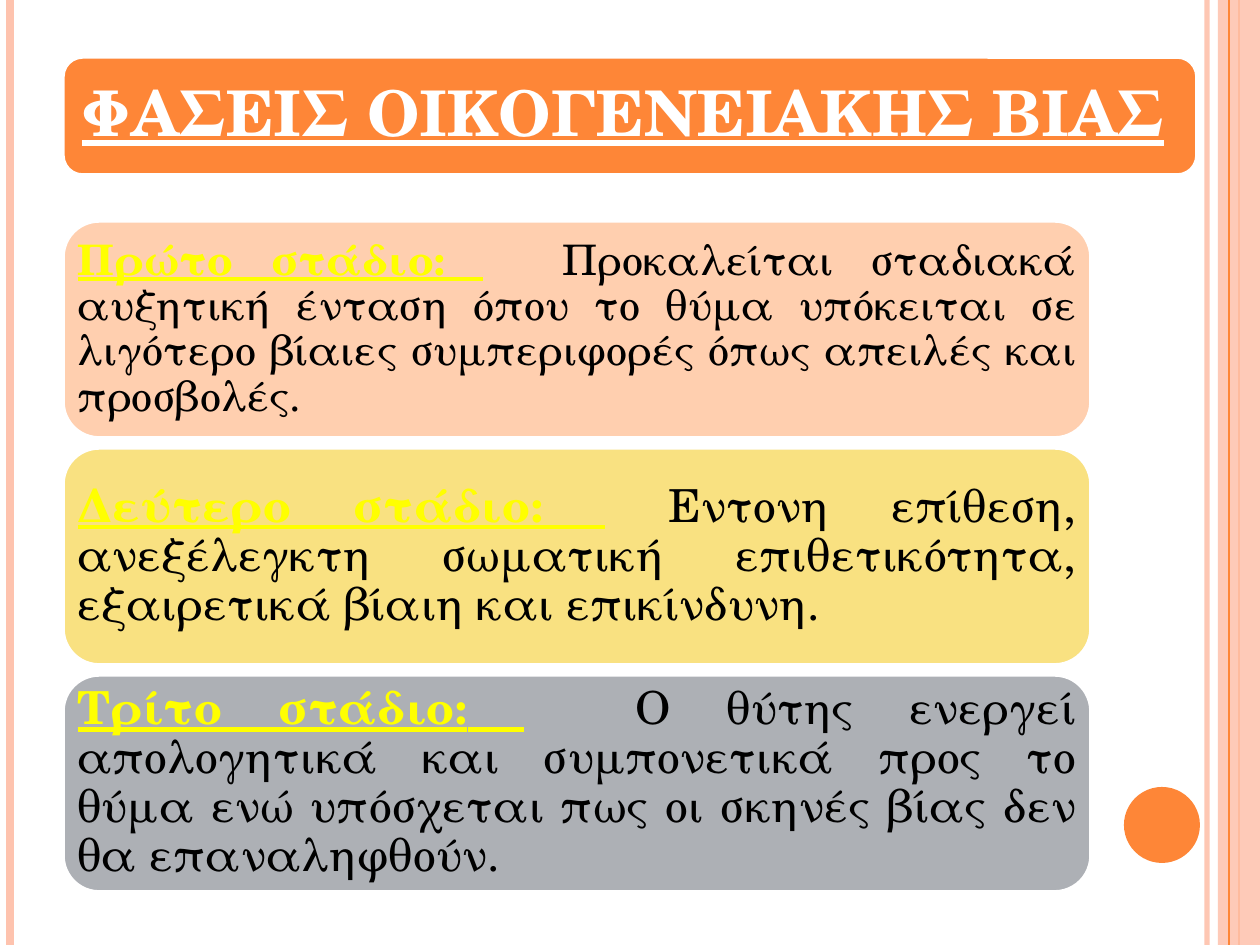
"""Builds a slide that describes the phases of domestic violence."""
from dataclasses import dataclass

from lxml import etree
from pptx import Presentation, util as u
from pptx.dml.color import RGBColor
from pptx.enum import shapes, text
from pptx.oxml.ns import qn

EMU_PER_PX = 914400 / 126
WIDTH, HEIGHT = 1260, 945


@dataclass(frozen=True)
class Theme:
    font: str = "TeX Gyre Schola"
    orange: str = "FE8637"
    pink: str = "FEC3AE"
    white: str = "FFFFFF"
    black: str = "000000"
    yellow: str = "FFFF00"
    peach: str = "FFCFAF"
    sand: str = "F9E181"
    grey: str = "ADB0B5"
    title_size: int = 36
    small_size: int = 24
    body_size: int = 26
    outline: int = 2


THEME = Theme()

STRIPES = [
    (1207, THEME.pink, 3, 93),
    (10, THEME.pink, 4.5, 100),
    (1239, THEME.orange, 1.5, 100),
]
INNER_STRIPE = (1229, THEME.orange, 0.75, 100)

STAGES = [
    ("Πρώτο στάδιο:", 45, THEME.small_size, THEME.peach,
     "Προκαλείται σταδιακά αυξητική ένταση όπου το θύμα υπόκειται σε "
     "λιγότερο βίαιες συμπεριφορές όπως απειλές και προσβολές."),
    ("Δεύτερο στάδιο:", 36, THEME.body_size, THEME.sand,
     "Εντονη επίθεση, ανεξέλεγκτη σωματική επιθετικότητα, "
     "εξαιρετικά βίαιη και επικίνδυνη."),
    ("Τρίτο στάδιο:", 64, THEME.body_size, THEME.grey,
     "Ο θύτης ενεργεί απολογητικά και συμπονετικά προς το θύμα ενώ "
     "υπόσχεται πως οι σκηνές βίας δεν θα επαναληφθούν."),
]
STAGE_LEFT, STAGE_TOP, STAGE_PITCH = 63, 221, 227
STAGE_WIDTH, STAGE_HEIGHT = 1028, 217
TITLE_BOX = (63, 57, 1134, 118)


def px(length):
    return u.Emu(round(length * EMU_PER_PX))


def paint(fill, color, opacity=100):
    fill.solid()
    fill.fore_color.rgb = RGBColor.from_string(color)
    if opacity < 100:
        color_node = next(fill._xPr.iter(qn("a:srgbClr")))
        etree.SubElement(color_node, qn("a:alpha")).set("val", str(opacity * 1000))


def add_stripe(slide, x, color, width, opacity):
    stripe = slide.shapes.add_connector(
        shapes.MSO_CONNECTOR.STRAIGHT, px(x), px(0), px(x), px(HEIGHT))
    stripe.line.width = u.Pt(width)
    paint(stripe.line.fill, color, opacity)
    etree.SubElement(stripe._element.spPr, qn("a:effectLst"))


def add_block(slide, kind, box, color, opacity=100, outline=None):
    shape = slide.shapes.add_shape(kind, *map(px, box))
    shape.shadow.inherit = False
    paint(shape.fill, color, opacity)
    if outline:
        shape.line.width = u.Pt(THEME.outline)
        paint(shape.line.fill, outline)
    else:
        shape.line.fill.background()
    return shape


def set_frame(shape, align, inset_x, inset_y):
    frame = shape.text_frame
    frame.word_wrap = True
    frame.auto_size = text.MSO_AUTO_SIZE.NONE
    frame.vertical_anchor = text.MSO_ANCHOR.MIDDLE
    frame.margin_left = frame.margin_right = px(inset_x)
    frame.margin_top = frame.margin_bottom = px(inset_y)
    paragraph = frame.paragraphs[0]
    paragraph.alignment = align
    paragraph.line_spacing = 0.9
    paragraph.space_before = u.Pt(0)
    return paragraph


def add_run(paragraph, words, size, color, strong=False, spacing=0):
    run = paragraph.add_run()
    run.text = words
    font = run.font
    font.name = THEME.font
    font.size = u.Pt(size)
    font.bold = font.underline = strong
    font.color.rgb = RGBColor.from_string(color)
    if spacing:
        run._r.get_or_add_rPr().set("spc", str(spacing * 100))


def add_title(slide, words):
    bar = add_block(slide, shapes.MSO_SHAPE.ROUNDED_RECTANGLE, TITLE_BOX,
                    THEME.orange, outline=THEME.white)
    title = slide.shapes.title
    title.left, title.top, title.width, title.height = map(px, TITLE_BOX)
    bar._element.addnext(title._element)
    paragraph = set_frame(title, text.PP_ALIGN.LEFT, 19, 19)
    add_run(paragraph, words, THEME.title_size, THEME.white, strong=True)


def add_stage(slide, index, label, gap, size, color, words):
    box = (STAGE_LEFT, STAGE_TOP + index * STAGE_PITCH, STAGE_WIDTH, STAGE_HEIGHT)
    shape = add_block(slide, shapes.MSO_SHAPE.ROUNDED_RECTANGLE, box, color,
                      outline=THEME.white)
    paragraph = set_frame(shape, text.PP_ALIGN.JUSTIFY, 4, 0)
    add_run(paragraph, label, size, THEME.yellow, strong=True)
    add_run(paragraph, " ", size, THEME.yellow, strong=True, spacing=gap)
    add_run(paragraph, words, size, THEME.black)


def add_decoration(slide):
    for stripe in STRIPES:
        add_stripe(slide, *stripe)
    add_block(slide, shapes.MSO_SHAPE.RECTANGLE, (1218, 0, WIDTH - 1218, HEIGHT),
              THEME.pink, opacity=87)
    add_stripe(slide, *INNER_STRIPE)
    add_block(slide, shapes.MSO_SHAPE.OVAL, (1124, 787, 76, 76), THEME.orange)


def main():
    presentation = Presentation()
    presentation.slide_width, presentation.slide_height = px(WIDTH), px(HEIGHT)
    slide = presentation.slides.add_slide(presentation.slide_layouts[5])
    paint(slide.background.fill, THEME.white)
    add_decoration(slide)
    add_title(slide, "ΦΑΣΕΙΣ ΟΙΚΟΓΕΝΕΙΑΚΗΣ ΒΙΑΣ")
    for index, stage in enumerate(STAGES):
        add_stage(slide, index, *stage)
    presentation.save("out.pptx")


if __name__ == "__main__":
    main()
